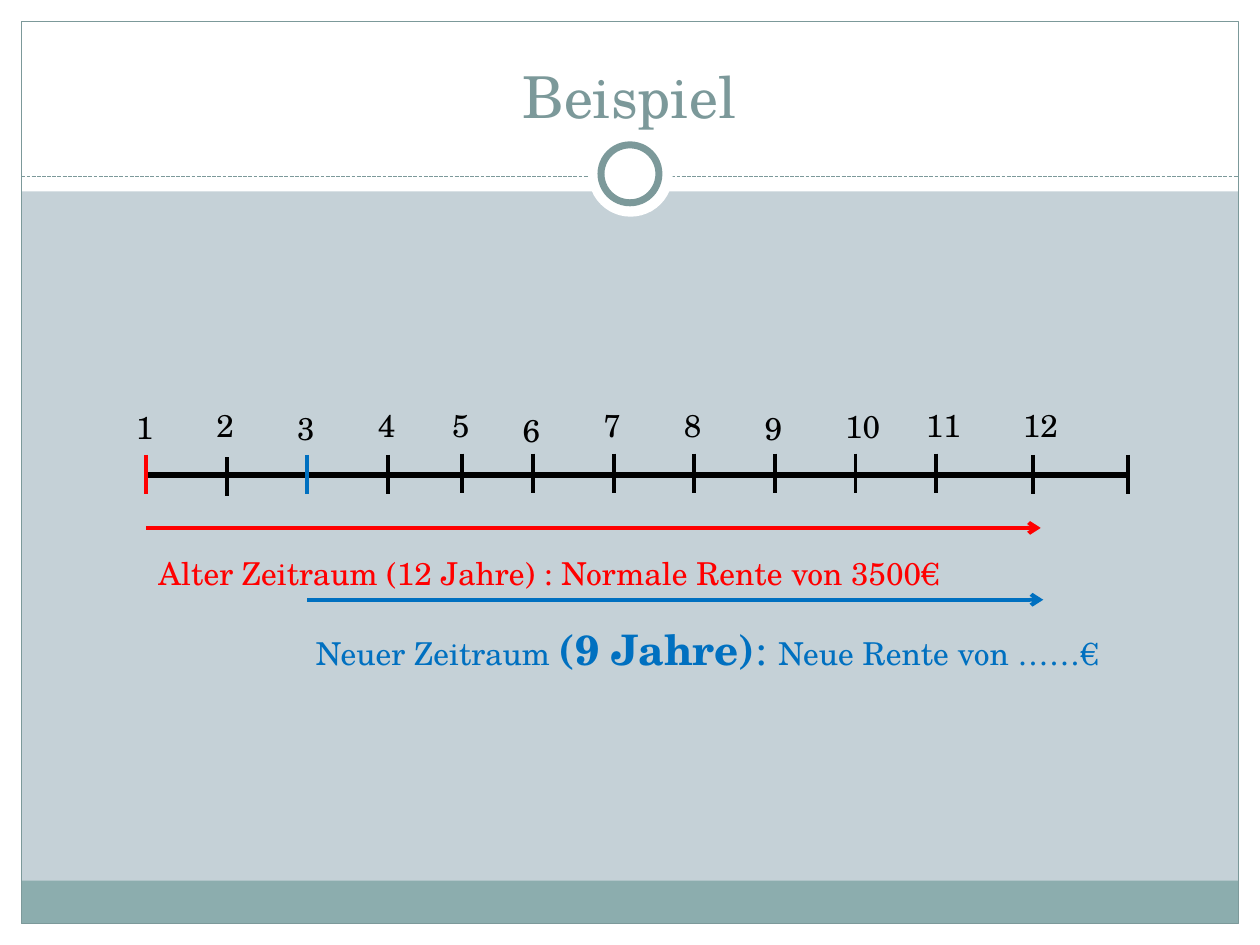
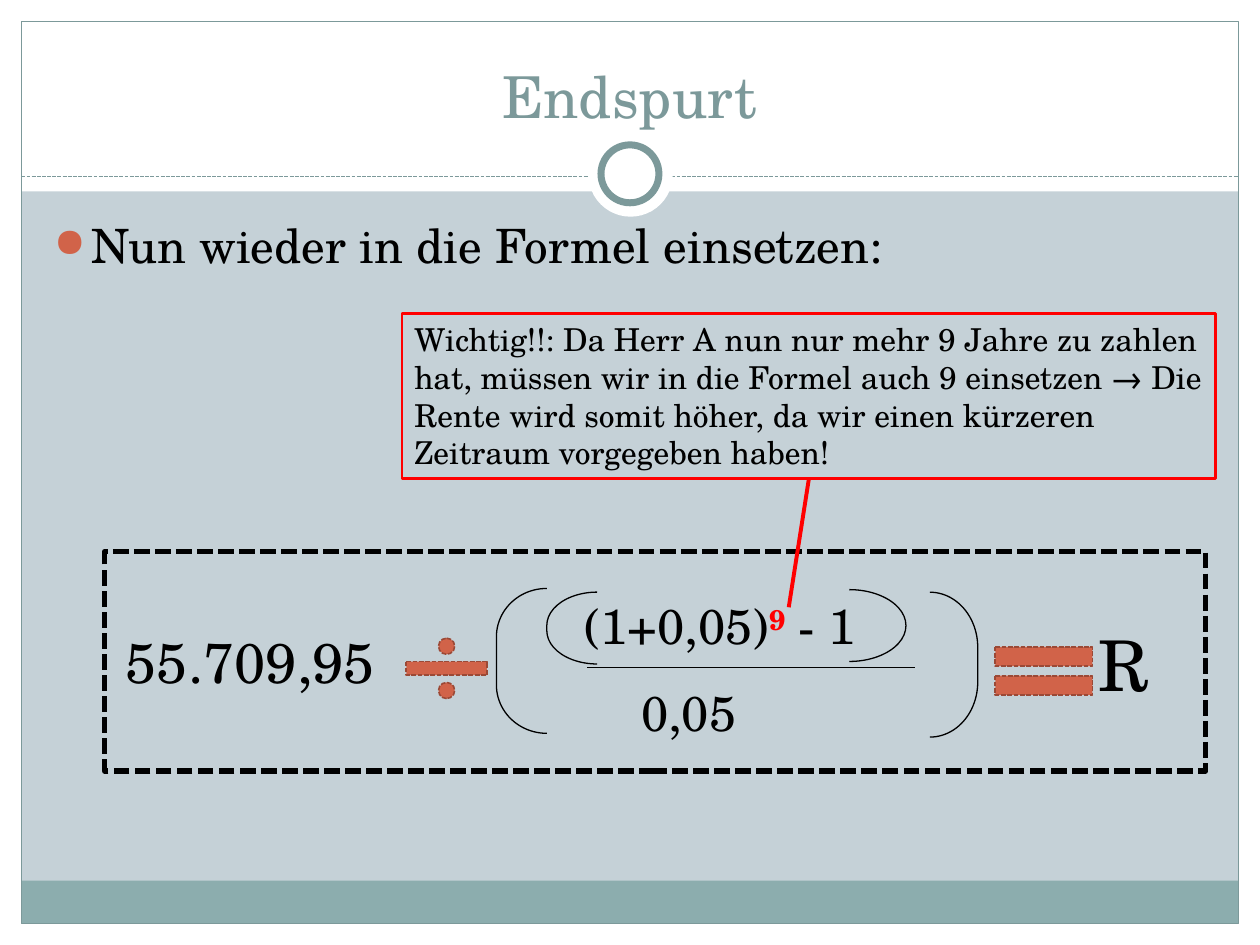
from dataclasses import dataclass

from lxml import etree
from pptx import Presentation
from pptx.dml.color import RGBColor
from pptx.enum.dml import MSO_LINE
from pptx.enum.shapes import MSO_CONNECTOR, MSO_SHAPE
from pptx.enum.text import MSO_ANCHOR, PP_ALIGN
from pptx.oxml.ns import qn
from pptx.util import Inches, Pt

RECTANGLE, OVAL = MSO_SHAPE.RECTANGLE, MSO_SHAPE.OVAL
DIVIDE, EQUAL = MSO_SHAPE.MATH_DIVIDE, MSO_SHAPE.MATH_EQUAL
LEFT_BRACKET, RIGHT_BRACKET = MSO_SHAPE.LEFT_BRACKET, MSO_SHAPE.RIGHT_BRACKET
STRAIGHT, DASH = MSO_CONNECTOR.STRAIGHT, MSO_LINE.SQUARE_DOT
CENTER, TOP, BOTTOM = PP_ALIGN.CENTER, MSO_ANCHOR.TOP, MSO_ANCHOR.BOTTOM
BOTTOM_SIDE = 2


@dataclass(frozen=True)
class Theme:
    """Colours, font and type sizes of the presentation."""
    font: str = "TeX Gyre Schola"
    background: str = "C5D1D7"
    white: str = "FFFFFF"
    band: str = "8CADAE"
    frame: str = "7C999A"
    black: str = "000000"
    red: str = "FF0000"
    blue: str = "0070C0"
    accent: str = "D16349"
    accent_edge: str = "9B4936"
    title: int = 33
    bullet: int = 27
    label: int = 18
    emphasis: int = 24
    term: int = 28
    amount: int = 32
    result: int = 40


THEME = Theme()


@dataclass(frozen=True)
class Box:
    """A rectangle in inches that places parts relative to its corner."""
    left: float
    top: float
    width: float
    height: float

    def inside(self, left, top, width, height):
        """Return a box offset from this one's corner."""
        return Box(self.left + left, self.top + top, width, height)

    def point(self, x, y):
        """Return a point offset from this box's corner."""
        return self.left + x, self.top + y

    def lengths(self):
        """Return left, top, width and height as lengths."""
        return [Inches(value) for value in (self.left, self.top, self.width, self.height)]


PAGE = Box(0, 0, 10, 7.5)
TITLE = Box(0.33, 0.25, 9.33, 0.83)
TIMELINE = Box(1.16, 3.17, 7.79, 2.23)
STATEMENT = Box(0.33, 1.67, 9.3, 0.66)
CALLOUT = Box(3.19, 2.49, 6.46, 1.31)
FORMULA = Box(0.83, 4.38, 8.74, 1.74)


def color(value):
    """Turn a hexadecimal string into a colour."""
    return RGBColor.from_string(value)


def style_line(line, line_color, width, dash=None):
    """Set colour, width and dash of a line."""
    line.color.rgb = color(line_color)
    line.width = Pt(width)
    if dash is not None:
        line.dash_style = dash


def add_figure(slide, kind, box, fill=None, line=None, adjustments=()):
    """Add a preset shape with an optional fill and line."""
    shape = slide.shapes.add_shape(kind, *box.lengths())
    shape.shadow.inherit = False
    for index, value in enumerate(adjustments):
        shape.adjustments[index] = value
    if fill:
        shape.fill.solid()
        shape.fill.fore_color.rgb = color(fill)
    else:
        shape.fill.background()
    if line:
        style_line(shape.line, *line)
    else:
        shape.line.fill.background()
    return shape


def add_line(slide, start, end, line, arrow=False):
    """Add a straight line, with an arrowhead at its end if wanted."""
    ends = [Inches(value) for value in (*start, *end)]
    connector = slide.shapes.add_connector(STRAIGHT, *ends)
    style_line(connector.line, *line)
    properties = connector._element.spPr
    if arrow:
        etree.SubElement(properties.find(qn("a:ln")), qn("a:tailEnd"), type="arrow")
    etree.SubElement(properties, qn("a:effectLst"))
    return connector


def add_text(slide, box, pieces, size, text_color=THEME.black, align=None, anchor=TOP):
    """Add a text box of one paragraph from (text, format) pieces."""
    shape = slide.shapes.add_textbox(*box.lengths())
    frame = shape.text_frame
    frame.word_wrap = True
    frame.vertical_anchor = anchor
    paragraph = frame.paragraphs[0]
    paragraph.alignment = align
    for text, options in pieces:
        run = paragraph.add_run()
        run.text = text
        run.font.name = THEME.font
        run.font.size = Pt(options.get("size", size))
        run.font.bold = options.get("bold", False)
        run.font.color.rgb = color(options.get("color", text_color))
        if options.get("superscript"):
            run.font._element.set("baseline", "30000")
    return shape


def add_bullet(paragraph):
    """Give a paragraph a coloured round bullet and a hanging indent."""
    paragraph.space_before = Pt(THEME.bullet * 0.2)
    properties = paragraph._p.get_or_add_pPr()
    properties.set("marL", str(Inches(0.3)))
    properties.set("indent", str(-Inches(0.3)))
    bullet_color = etree.SubElement(properties, qn("a:buClr"))
    etree.SubElement(bullet_color, qn("a:srgbClr"), val=THEME.accent)
    etree.SubElement(properties, qn("a:buSzPct"), val="85000")
    etree.SubElement(properties, qn("a:buChar"), char="●")


def add_titled_slide(presentation, title):
    """Add a blank slide with the shared frame, bands and title."""
    slide = presentation.slides.add_slide(presentation.slide_layouts[6])
    slide.background.fill.solid()
    slide.background.fill.fore_color.rgb = color(THEME.background)
    margin = 0.17
    right, bottom = PAGE.width - margin, PAGE.height - margin
    for box in (
        PAGE.inside(0, bottom, PAGE.width, margin),
        PAGE.inside(0, 0, PAGE.width, 1.52),
        PAGE.inside(0, 0, margin, PAGE.height),
        PAGE.inside(right, 0, margin, PAGE.height),
    ):
        add_figure(slide, RECTANGLE, box, THEME.white)
    inner_width = right - margin
    add_figure(slide, RECTANGLE, PAGE.inside(margin, 6.99, inner_width, 0.34), THEME.band)
    add_figure(slide, RECTANGLE, PAGE.inside(margin, margin, inner_width, bottom - margin),
               line=(THEME.frame, 0.75))
    add_line(slide, (margin, 1.4), (right, 1.4), (THEME.frame, 0.75, DASH))
    add_figure(slide, OVAL, PAGE.inside(4.67, 1.05, 0.67, 0.67), THEME.white)
    add_figure(slide, OVAL, PAGE.inside(4.77, 1.15, 0.46, 0.46), THEME.white, (THEME.frame, 4))
    add_text(slide, TITLE, [(title, {})], THEME.title, THEME.frame, CENTER, BOTTOM)
    return slide


def add_year_axis(slide, box):
    """Draw the year axis with its ticks and numbers."""
    add_line(slide, box.point(0, 0.6), box.point(box.width, 0.6), (THEME.black, 3))
    tick_colors = {1: THEME.red, 3: THEME.blue}
    ticks = (
        (0, 0.44, 0.02), (0.64, 0.46, 0), (1.28, 0.44, 0.03), (1.92, 0.44, 0),
        (2.51, 0.43, 0), (3.07, 0.43, 0.04), (3.71, 0.43, 0), (4.35, 0.43, 0),
        (4.99, 0.43, 0.03), (5.63, 0.43, 0.01), (6.27, 0.43, 0), (7.04, 0.44, 0),
        (box.width, 0.44, None),
    )
    for year, (x, tick_top, label_top) in enumerate(ticks, 1):
        add_line(slide, box.point(x, tick_top), box.point(x, tick_top + 0.31),
                 (tick_colors.get(year, THEME.black), 2.25))
        if label_top is not None:
            width = 0.36 if year < 10 else 0.5
            add_text(slide, box.inside(x - 0.18, label_top, width, 0.4),
                     [(str(year), {})], THEME.label)


def add_period(slide, box, arrow_length, text_left, text_top, pieces, period_color):
    """Draw a period arrow along the top of its box and its caption below."""
    add_line(slide, box.point(0, 0), box.point(arrow_length, 0), (period_color, 2.25), True)
    add_text(slide, box.inside(text_left, text_top, box.width, box.height - text_top),
             pieces, THEME.label, period_color)


def add_timeline(slide, box):
    """Draw the year axis and the old and new periods below it."""
    add_year_axis(slide, box)
    add_period(slide, box.inside(0, 1.02, 6.93, 0.56), 7.1, 0, 0.16,
               [("Alter Zeitraum (12 Jahre) : Normale Rente von 3500€", {})], THEME.red)
    add_period(slide, box.inside(1.28, 1.59, 6.93, 0.64), 5.84, -0.03, 0.14, [
        ("Neuer Zeitraum ", {}),
        ("(9 Jahre)", {"size": THEME.emphasis, "bold": True}),
        (": ", {"size": THEME.emphasis}),
        ("Neue Rente von ……€", {}),
    ], THEME.blue)


def add_formula(slide, box):
    """Draw the dashed formula box with its terms, signs and brackets."""
    add_line(slide, box.point(3.83, 0.92), box.point(6.43, 0.92), (THEME.black, 0.75))
    add_figure(slide, RECTANGLE, box, line=(THEME.black, 3, DASH))
    numerator = [("(1+0,05)", {}),
                 ("9", {"color": THEME.red, "bold": True, "superscript": True}),
                 (" - 1", {})]
    for place, pieces, size in (
        ((3.71, 0.3, 2.38, 0.57), numerator, THEME.term),
        ((4.16, 0.99, 1.74, 0.57), [("0,05", {})], THEME.term),
        ((0.07, 0.55, 2.2, 0.64), [("55.709,95", {})], THEME.amount),
        ((7.79, 0.5, 0.79, 0.77), [("R", {})], THEME.result),
    ):
        add_text(slide, box.inside(*place), pieces, size)
    for kind, place, adjustments in (
        (DIVIDE, (2.28, 0.44, 0.87, 0.97), (0.112, 0.059, 0.066)),
        (EQUAL, (6.93, 0.62, 1.05, 0.65), ()),
    ):
        add_figure(slide, kind, box.inside(*place), THEME.accent,
                   (THEME.accent_edge, 0.9, DASH), adjustments)
    for kind, place, curve in (
        (LEFT_BRACKET, (3.51, 0.32, 0.4, 0.57), 0.66),
        (RIGHT_BRACKET, (5.91, 0.3, 0.45, 0.57), 0.64),
        (LEFT_BRACKET, (3.11, 0.29, 0.4, 1.15), 0.96),
        (RIGHT_BRACKET, (6.55, 0.32, 0.38, 1.15), 1.15),
    ):
        add_figure(slide, kind, box.inside(*place), line=(THEME.black, 0.75),
                   adjustments=(curve,))


def add_callout(slide, box, target):
    """Draw the framed note and the line from it to the exponent."""
    text = ("Wichtig!!: Da Herr A nun nur mehr 9 Jahre zu zahlen hat, müssen wir in die "
            "Formel auch 9 einsetzen → Die Rente wird somit höher, da wir einen kürzeren "
            "Zeitraum vorgegeben haben!")
    note = add_text(slide, box, [(text, {})], THEME.label)
    style_line(note.line, THEME.red, 1.5)
    pointer = add_line(slide, box.point(box.width / 2, box.height), target, (THEME.red, 2.25))
    pointer.begin_connect(note, BOTTOM_SIDE)


def build_example_slide(presentation):
    """Build the slide with the timeline."""
    slide = add_titled_slide(presentation, "Beispiel")
    add_timeline(slide, TIMELINE)


def build_formula_slide(presentation):
    """Build the slide with the formula."""
    slide = add_titled_slide(presentation, "Endspurt")
    statement = add_text(slide, STATEMENT, [("Nun wieder in die Formel einsetzen:", {})],
                         THEME.bullet)
    add_bullet(statement.text_frame.paragraphs[0])
    add_formula(slide, FORMULA)
    add_callout(slide, CALLOUT, FORMULA.point(5.43, 0.44))


def main():
    """Build and save the presentation."""
    presentation = Presentation()
    presentation.slide_width = Inches(PAGE.width)
    presentation.slide_height = Inches(PAGE.height)
    build_example_slide(presentation)
    build_formula_slide(presentation)
    presentation.save("out.pptx")


if __name__ == "__main__":
    main()
